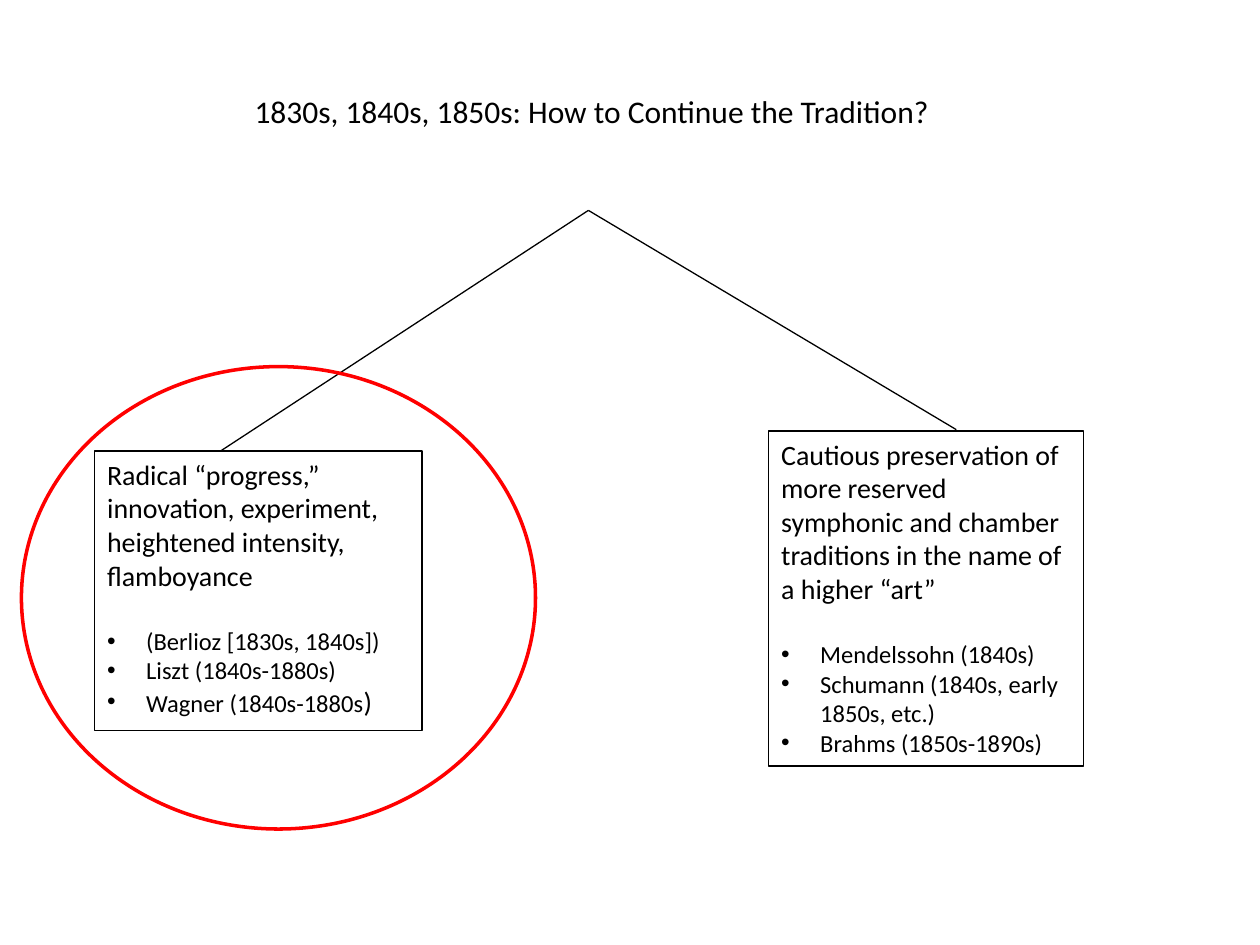
from pptx import Presentation
from pptx.dml.color import RGBColor
from pptx.enum import shapes, text
from pptx.oxml import ns, xmlchemy as xml
from pptx.util import Inches, Pt

COLORS = {"ink": "000000", "ring": "FF0000"}


def outline(shape, color, width):
    shape.line.color.rgb = RGBColor.from_string(COLORS[color])
    shape.line.width = Pt(width)


def style(para, size, bullet=False):
    para.font.name = "Calibri"
    para.font.size = Pt(size)
    para.font.color.rgb = RGBColor.from_string(COLORS["ink"])
    para.alignment = text.PP_ALIGN.LEFT
    para.space_before = Pt(0)
    props = para._p.get_or_add_pPr()
    indent = Inches(0.31) if bullet else 0
    props.set("marL", str(indent))
    props.set("indent", str(-indent))
    mark = xml.OxmlElement("a:buChar" if bullet else "a:buNone")
    if bullet:
        mark.set("char", "•")
    # Bullets must precede the default run properties
    props.insert_element_before(mark, "a:tabLst", "a:defRPr", "a:extLst")


prs = Presentation()
prs.slide_width, prs.slide_height = Inches(10), Inches(7.5)
slide = prs.slides.add_slide(prs.slide_layouts[3])

# Title
title = slide.shapes.title
title.left, title.top = Inches(1.92), Inches(0.68)
title.width, title.height = Inches(6), Inches(0.4)
title.text_frame.text = "1830s, 1840s, 1850s: How to Continue the Tradition?"
title.text_frame.vertical_anchor = text.MSO_ANCHOR.TOP
style(title.text_frame.paragraphs[0], 18)

# Two camps: placeholder, box, branch end, heading, composers
camps = [
    (1, (0.75, 3.58, 2.6, 2.22), (1.75, 3.58),
     "Radical “progress,” innovation, experiment, heightened intensity, flamboyance",
     ["(Berlioz [1830s, 1840s])", "Liszt (1840s-1880s)", "Wagner (1840s-1880s"]),
    (2, (6.1, 3.42, 2.5, 2.66), (7.59, 3.41),
     "Cautious preservation of more reserved symphonic and chamber "
     "traditions in the name of a higher “art”",
     ["Mendelssohn (1840s)", "Schumann (1840s, early 1850s, etc.)",
      "Brahms (1850s-1890s)"]),
]
fork = Inches(4.67), Inches(1.67)
for idx, box, end, head, names in camps:
    camp = slide.placeholders[idx]
    camp.left, camp.top, camp.width, camp.height = map(Inches, box)
    outline(camp, "ink", 0.75)
    frame = camp.text_frame
    frame.auto_size = text.MSO_AUTO_SIZE.NONE
    frame.text = head
    style(frame.paragraphs[0], 16)
    for i, name in enumerate(names):
        para = frame.add_paragraph()
        para.text = name
        style(para, 14, bullet=True)
        if i == 0:
            para.space_before = Pt(19.5)

    # Branch from the fork
    branch = slide.shapes.add_connector(
        shapes.MSO_CONNECTOR.STRAIGHT, *fork, *map(Inches, end))
    outline(branch, "ink", 0.75)
    branch._element.find(ns.qn("p:spPr")).append(xml.OxmlElement("a:effectLst"))

# Larger closing bracket after the last radical name
close = slide.placeholders[1].text_frame.paragraphs[-1].add_run()
close.text = ")"
close.font.size = Pt(16)

# Ring around the radical camp
ring = slide.shapes.add_shape(
    shapes.MSO_SHAPE.OVAL, Inches(0.17), Inches(2.91), Inches(4.08), Inches(3.67))
ring.shadow.inherit = False
ring.fill.background()
outline(ring, "ring", 2)

prs.save("out.pptx")
